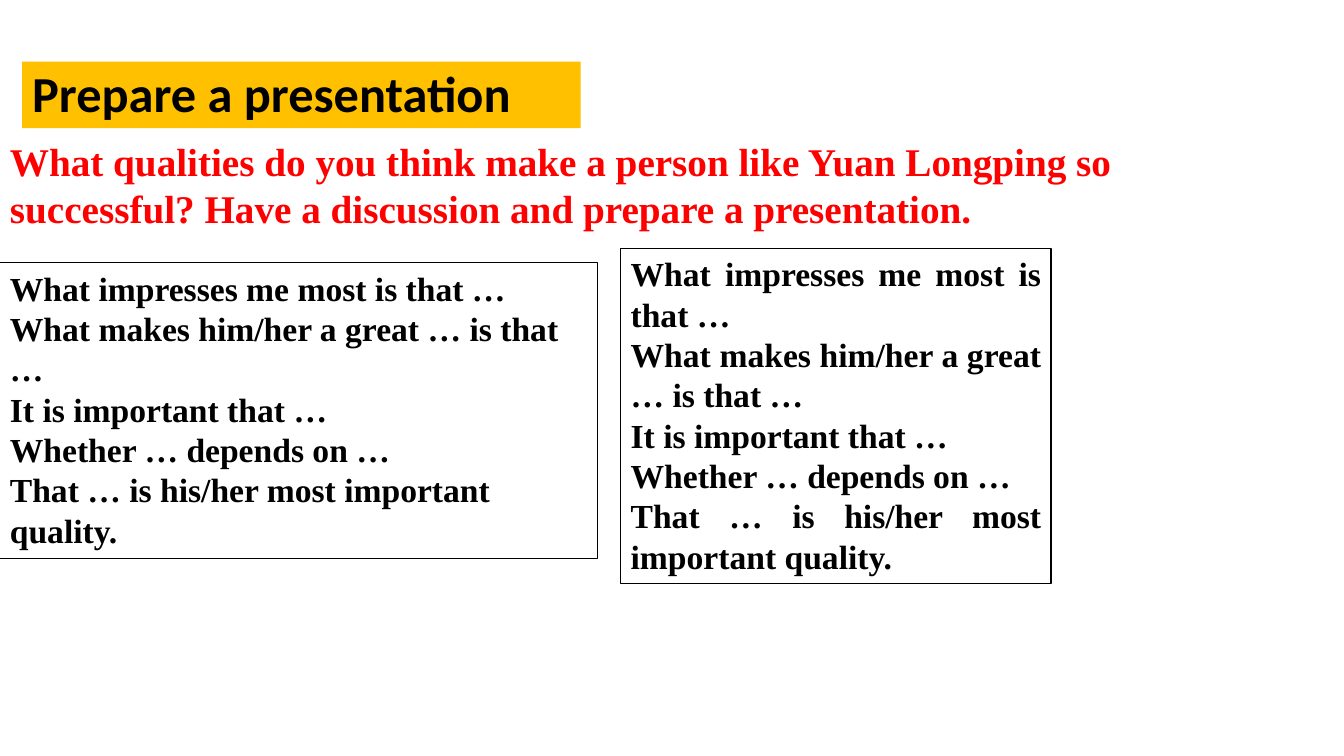
from pptx import Presentation
from pptx.dml.color import RGBColor
from pptx.enum.shapes import MSO_SHAPE
from pptx.enum.text import MSO_ANCHOR, MSO_AUTO_SIZE, PP_ALIGN
from pptx.util import Pt

AMBER = RGBColor(0xFF, 0xC0, 0x00)
RED = RGBColor(0xFF, 0x00, 0x00)
BLACK = RGBColor(0x00, 0x00, 0x00)
WHITE = RGBColor(0xFF, 0xFF, 0xFF)
SERIF = "Times New Roman"

TASK = ("What qualities do you think make a person like Yuan Longping so "
        "successful? Have a discussion and prepare a presentation.")
STEMS = [
    "What impresses me most is that …",
    "What makes him/her a great … is that …",
    "It is important that …",
    "Whether … depends on …",
    "That … is his/her most important quality.",
]


def write(shape, lines, face, size, color, align, anchor=MSO_ANCHOR.TOP):
    frame = shape.text_frame
    frame.text = "\n".join(lines)
    frame.word_wrap = True
    frame.auto_size = MSO_AUTO_SIZE.NONE
    frame.vertical_anchor = anchor
    for para in frame.paragraphs:
        para.alignment = align
        for run in para.runs:
            font = run.font
            font.name = face
            font.size = Pt(size)
            font.bold = True
            font.color.rgb = color


def add_head(slide, left, top, width, height):
    head = slide.shapes.title
    head.left, head.top = Pt(left), Pt(top)
    head.width, head.height = Pt(width), Pt(height)
    head.fill.solid()
    head.fill.fore_color.rgb = AMBER
    write(head, ["Prepare a presentation"], "Calibri", 36, BLACK,
          PP_ALIGN.JUSTIFY)
    head.text_frame.paragraphs[0].line_spacing = Pt(40)


def add_task(slide, left, top, width, height):
    task = slide.shapes.add_textbox(Pt(left), Pt(top), Pt(width), Pt(height))
    write(task, [TASK], SERIF, 28, RED, PP_ALIGN.LEFT)


def add_stems(slide, left, top, width, height, align):
    card = slide.shapes.add_shape(
        MSO_SHAPE.RECTANGLE, Pt(left), Pt(top), Pt(width), Pt(height))
    card.shadow.inherit = False
    card.fill.solid()
    card.fill.fore_color.rgb = WHITE
    card.line.color.rgb = BLACK
    card.line.width = Pt(0.75)
    write(card, STEMS, SERIF, 24, BLACK, align)


def main():
    deck = Presentation()
    deck.slide_width, deck.slide_height = Pt(960), Pt(540)
    slide = deck.slides.add_slide(deck.slide_layouts[5])
    add_head(slide, 15.8, 44, 399, 47.5)
    add_task(slide, 0, 94.3, 838, 113)
    add_stems(slide, 0, 187.7, 427, 211, PP_ALIGN.LEFT)
    add_stems(slide, 443.4, 177.4, 307.4, 239.6, PP_ALIGN.JUSTIFY)
    deck.save("out.pptx")


if __name__ == "__main__":
    main()
